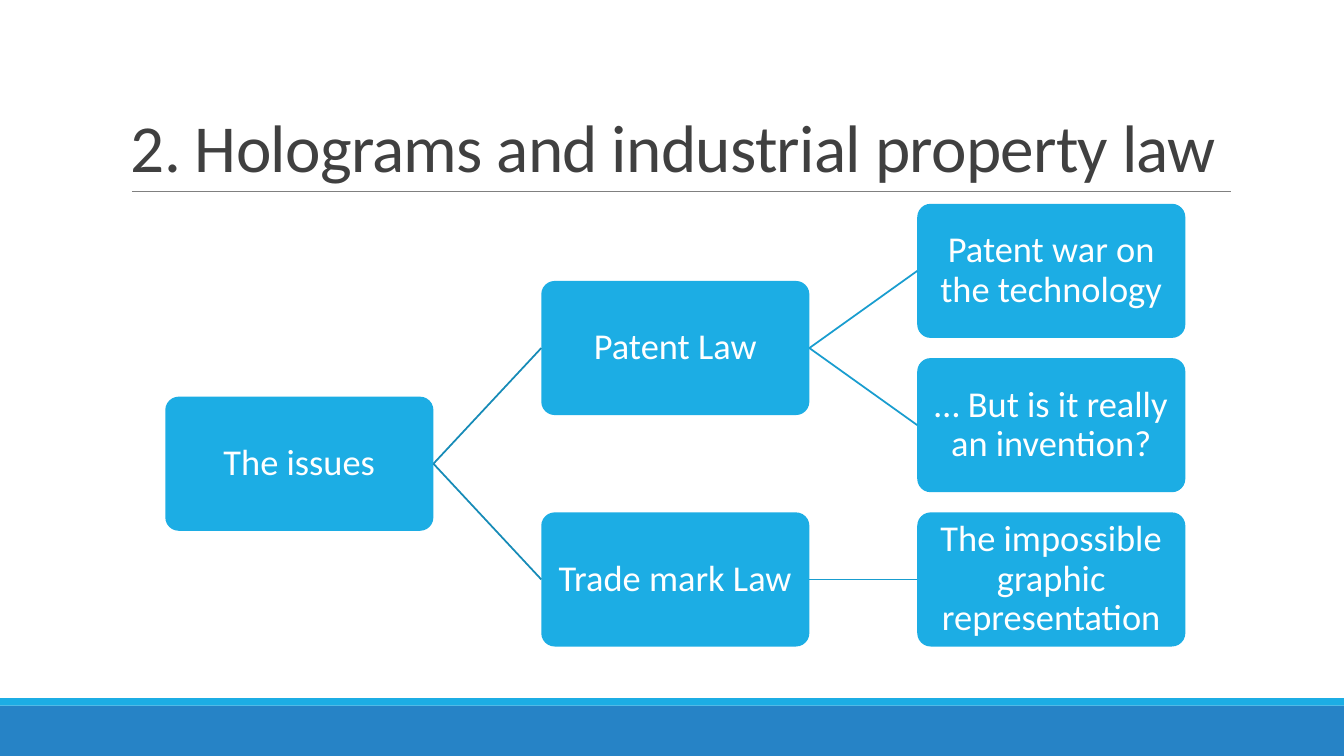
from dataclasses import dataclass

from lxml import etree
from pptx import Presentation
from pptx.dml.color import RGBColor
from pptx.enum.shapes import MSO_CONNECTOR, MSO_SHAPE
from pptx.enum.text import MSO_ANCHOR, PP_ALIGN
from pptx.oxml.ns import qn
from pptx.shapes.autoshape import Shape
from pptx.shapes.connector import Connector
from pptx.slide import Slide
from pptx.text.text import TextFrame
from pptx.util import Pt

RECT = MSO_SHAPE.RECTANGLE
ROUNDED = MSO_SHAPE.ROUNDED_RECTANGLE
STRAIGHT = MSO_CONNECTOR.STRAIGHT
MIDDLE = MSO_ANCHOR.MIDDLE
BOTTOM = MSO_ANCHOR.BOTTOM
CENTER = PP_ALIGN.CENTER
LEFT = PP_ALIGN.LEFT
LEFT_SIDE, RIGHT_SIDE = 1, 3

FONT = "Calibri"
COLORS = {
    "footer": "2683C6",
    "accent": "1CADE4",
    "rule": "808080",
    "title": "404040",
    "box_text": "FFFFFF",
    "first_branch": "168BB7",
    "second_branch": "199DCF",
}

SLIDE_W, SLIDE_H = 960, 540
BOX_W, BOX_H = 191.5, 95.8
TREE_X, TREE_Y = 118.1, 145.6
COLUMN_STEP, ROW_STEP = 268.55, 110.2


@dataclass(frozen=True)
class Band:
    top: float
    height: float
    color: str


@dataclass(frozen=True)
class Node:
    text: str
    column: int
    row: float


@dataclass(frozen=True)
class Branch:
    parent: int
    child: int
    color: str


BANDS = [Band(504, 36, "footer"), Band(498.7, 5.3, "accent")]
NODES = [
    Node("The issues", 0, 1.25),
    Node("Patent Law", 1, 0.5),
    Node("Trade mark Law", 1, 2),
    Node("Patent war on the technology", 2, 0),
    Node("… But is it really an invention?", 2, 1),
    Node("The impossible graphic representation", 2, 2),
]
BRANCHES = [
    Branch(0, 1, "first_branch"),
    Branch(0, 2, "first_branch"),
    Branch(1, 3, "second_branch"),
    Branch(1, 4, "second_branch"),
    Branch(2, 5, "second_branch"),
]


def rgb(name: str) -> RGBColor:
    return RGBColor.from_string(COLORS[name])


def write(tf: TextFrame, text: str, size: float, color: str,
          align: PP_ALIGN, spacing: float) -> None:
    tf.word_wrap = True
    tf.text = text
    p = tf.paragraphs[0]
    p.alignment = align
    p.line_spacing = spacing
    r = p.runs[0]
    r.font.name = FONT
    r.font.size = Pt(size)
    r.font.color.rgb = rgb(color)


def add_block(s: Slide, kind: MSO_SHAPE, x: float, y: float,
              w: float, h: float, color: str) -> Shape:
    sp = s.shapes.add_shape(kind, Pt(x), Pt(y), Pt(w), Pt(h))
    sp.shadow.inherit = False
    sp.fill.solid()
    sp.fill.fore_color.rgb = rgb(color)
    sp.line.fill.background()
    return sp


def add_line(s: Slide, x1: float, y1: float, x2: float, y2: float,
             color: str, width: float) -> Connector:
    line = s.shapes.add_connector(STRAIGHT, Pt(x1), Pt(y1), Pt(x2), Pt(y2))
    line.line.color.rgb = rgb(color)
    line.line.width = Pt(width)
    etree.SubElement(line._element.spPr, qn("a:effectLst"))
    return line


def add_title(s: Slide, text: str) -> None:
    sp = s.shapes.add_textbox(Pt(86.4), Pt(22.6), Pt(792), Pt(114.2))
    tf = sp.text_frame
    write(tf, text, 48, "title", LEFT, 0.85)
    tf.vertical_anchor = BOTTOM
    tf.paragraphs[0].runs[0].font._element.set("spc", "-50")


def add_node(s: Slide, node: Node) -> Shape:
    x = TREE_X + node.column * COLUMN_STEP
    y = TREE_Y + node.row * ROW_STEP
    sp = add_block(s, ROUNDED, x, y, BOX_W, BOX_H, "accent")
    sp.adjustments[0] = 0.1
    tf = sp.text_frame
    tf.margin_left = tf.margin_right = Pt(1.4)
    tf.margin_top = tf.margin_bottom = Pt(1.4)
    tf.vertical_anchor = MIDDLE
    write(tf, node.text, 26, "box_text", CENTER, 0.9)
    return sp


def add_branch(s: Slide, parent: Shape, child: Shape, color: str) -> None:
    line = add_line(s, 0, 0, 0, 0, color, 1.25)
    line.begin_connect(parent, RIGHT_SIDE)
    line.end_connect(child, LEFT_SIDE)


def main() -> None:
    prs = Presentation()
    prs.slide_width, prs.slide_height = Pt(SLIDE_W), Pt(SLIDE_H)
    s = prs.slides.add_slide(prs.slide_layouts[6])
    for band in BANDS:
        add_block(s, RECT, 0, band.top, SLIDE_W, band.height, band.color)
    add_line(s, 94.3, 136.8, 879, 136.8, "rule", 0.5)
    add_title(s, "2. Holograms and industrial property law")
    boxes = [add_node(s, node) for node in NODES]
    for branch in BRANCHES:
        add_branch(s, boxes[branch.parent], boxes[branch.child], branch.color)
    prs.save("out.pptx")


if __name__ == "__main__":
    main()
